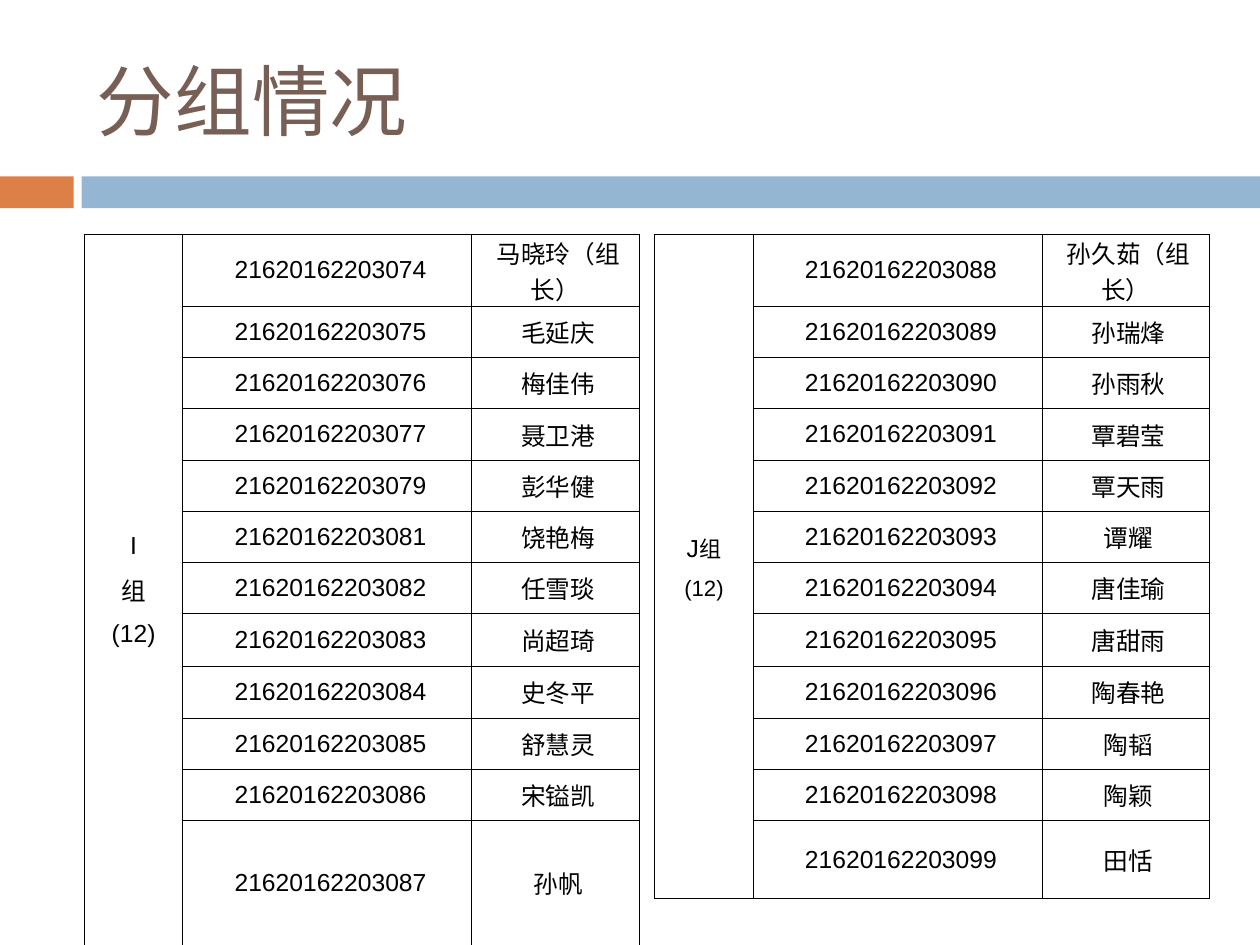
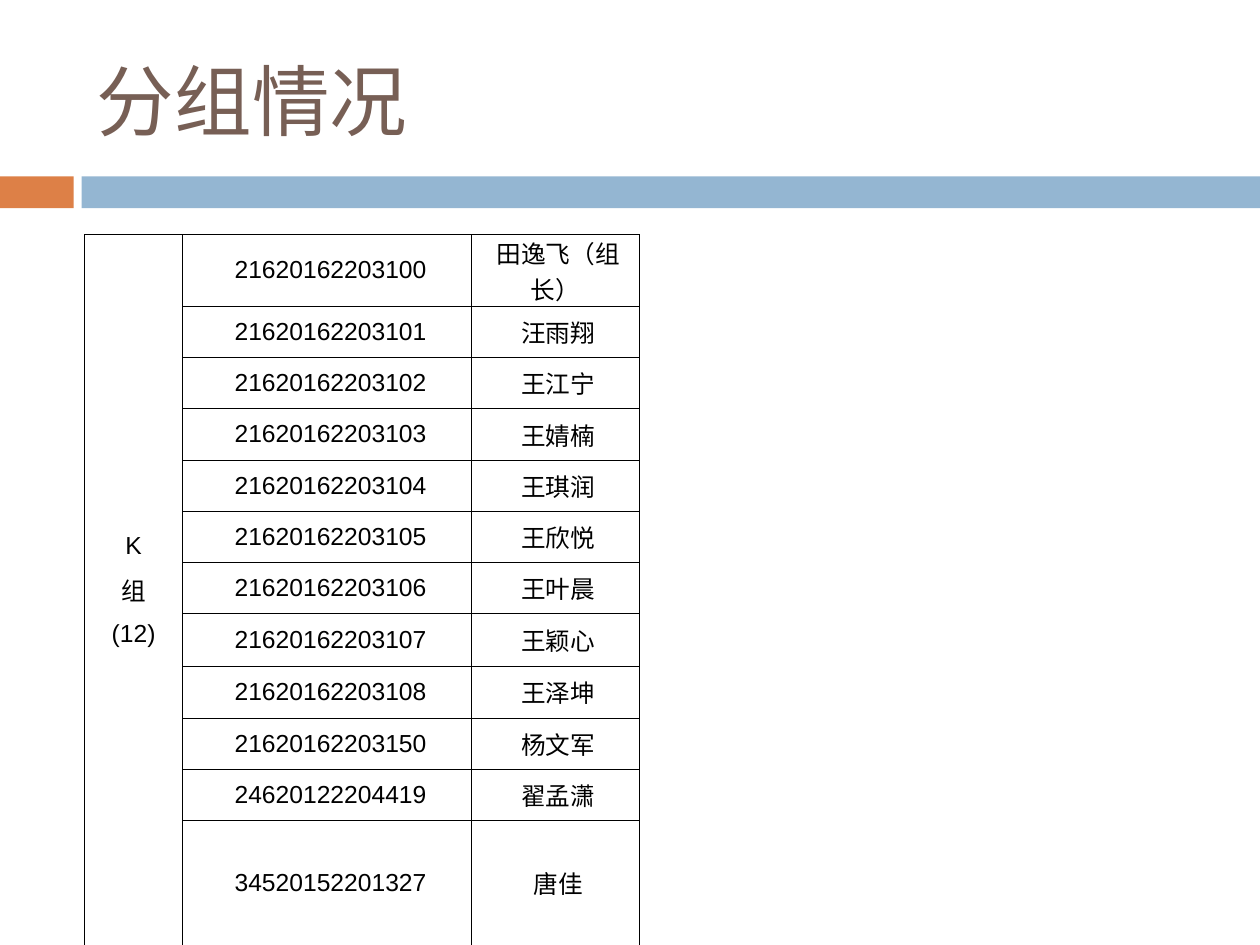
from lxml import etree
from pptx import Presentation
from pptx.dml.color import RGBColor
from pptx.enum import shapes, text
from pptx.oxml import ns
from pptx.util import Cm, Pt

ORANGE = RGBColor(0xDD, 0x80, 0x47)
BLUE = RGBColor(0x94, 0xB6, 0xD2)
BROWN = RGBColor(0x77, 0x5F, 0x55)
BLACK = RGBColor(0, 0, 0)
WHITE = RGBColor(0xFF, 0xFF, 0xFF)

SLIDE_WIDTH, SLIDE_HEIGHT = Cm(36.12), Cm(27.1)
MARGIN = Cm(2.42)
COLUMN_WIDTHS = [Cm(2.82), Cm(8.28), Cm(4.8)]
ROSTER_TOP = Cm(6.73)
ROSTER_STEP = sum(COLUMN_WIDTHS) + Cm(0.45)
ROW_HEIGHT, TALL_ROW_HEIGHT = Cm(1.47), Cm(1.5)
TALL_ROWS = (7, 8)

GROUP_I = [
    ("21620162203074", "马晓玲（组长）"),
    ("21620162203075", "毛延庆"),
    ("21620162203076", "梅佳伟"),
    ("21620162203077", "聂卫港"),
    ("21620162203079", "彭华健"),
    ("21620162203081", "饶艳梅"),
    ("21620162203082", "任雪琰"),
    ("21620162203083", "尚超琦"),
    ("21620162203084", "史冬平"),
    ("21620162203085", "舒慧灵"),
    ("21620162203086", "宋镒凯"),
    ("21620162203087", "孙帆"),
]
GROUP_J = [
    ("21620162203088", "孙久茹（组长）"),
    ("21620162203089", "孙瑞烽"),
    ("21620162203090", "孙雨秋"),
    ("21620162203091", "覃碧莹"),
    ("21620162203092", "覃天雨"),
    ("21620162203093", "谭耀"),
    ("21620162203094", "唐佳瑜"),
    ("21620162203095", "唐甜雨"),
    ("21620162203096", "陶春艳"),
    ("21620162203097", "陶韬"),
    ("21620162203098", "陶颖"),
    ("21620162203099", "田恬"),
]
GROUP_K = [
    ("21620162203100", "田逸飞（组长）"),
    ("21620162203101", "汪雨翔"),
    ("21620162203102", "王江宁"),
    ("21620162203103", "王婧楠"),
    ("21620162203104", "王琪润"),
    ("21620162203105", "王欣悦"),
    ("21620162203106", "王叶晨"),
    ("21620162203107", "王颖心"),
    ("21620162203108", "王泽坤"),
    ("21620162203150", "杨文军"),
    ("24620122204419", "翟孟潇"),
    ("34520152201327", "唐佳"),
]
LABEL_I = [[("I", 20)], [("组", 20)], [("(12)", 20)]]
LABEL_J = [[("J", 20), ("组", 18)], [("(12)", 18)]]
LABEL_K = [[("K", 20)], [("组", 20)], [("(12)", 20)]]


def write(paragraph, words, size=20, font="Arial", color=BLACK,
          align=text.PP_ALIGN.CENTER, before=0):
    paragraph.alignment = align
    paragraph.space_before = Pt(before)
    run = paragraph.add_run()
    run.text = words
    run.font.size = Pt(size)
    run.font.name = font
    run.font.color.rgb = color


class Deck:
    def __init__(self):
        self.presentation = Presentation()
        self.presentation.slide_width = SLIDE_WIDTH
        self.presentation.slide_height = SLIDE_HEIGHT
        self.slide = None

    def add_slide(self, heading):
        layout = self.presentation.slide_layouts.get_by_name("Title Only")
        self.slide = self.presentation.slides.add_slide(layout)
        self.band(0, Cm(2.11), ORANGE)
        self.band(Cm(2.34), SLIDE_WIDTH - Cm(2.34), BLUE)
        self.title(heading)

    def band(self, left, width, color):
        band = self.slide.shapes.add_shape(
            shapes.MSO_SHAPE.RECTANGLE, left, Cm(5.06), width, Cm(0.91))
        band.shadow.inherit = False
        band.fill.solid()
        band.fill.fore_color.rgb = color
        band.line.fill.background()

    def title(self, heading):
        title = self.slide.shapes.title
        title.left, title.top = MARGIN, Cm(0.91)
        title.width, title.height = Cm(32.2), Cm(3.91)
        frame = title.text_frame
        frame.auto_size = text.MSO_AUTO_SIZE.NONE
        frame.vertical_anchor = text.MSO_ANCHOR.MIDDLE
        frame.margin_left = frame.margin_right = Cm(0.36)
        frame.margin_top = frame.margin_bottom = Cm(0.18)
        write(frame.paragraphs[0], heading, size=63, font="Calibri",
              color=BROWN, align=text.PP_ALIGN.LEFT)

    def style_cell(self, cell):
        properties = cell._tc.get_or_add_tcPr()
        for side in ("a:lnL", "a:lnR", "a:lnT", "a:lnB"):
            border = etree.SubElement(properties, ns.qn(side), w=str(Pt(0.75)))
            paint = etree.SubElement(border, ns.qn("a:solidFill"))
            etree.SubElement(paint, ns.qn("a:srgbClr"), val=str(BLACK))
        cell.fill.solid()
        cell.fill.fore_color.rgb = WHITE
        cell.vertical_anchor = text.MSO_ANCHOR.MIDDLE

    def roster(self, position, label, members):
        roster = self.slide.shapes.add_table(
            len(members), len(COLUMN_WIDTHS), MARGIN + position * ROSTER_STEP,
            ROSTER_TOP, sum(COLUMN_WIDTHS), ROW_HEIGHT * len(members)).table
        roster.first_row = roster.horz_banding = False
        for column, width in zip(roster.columns, COLUMN_WIDTHS):
            column.width = width
        for index, row in enumerate(roster.rows):
            row.height = TALL_ROW_HEIGHT if index in TALL_ROWS else ROW_HEIGHT
        for cell in roster.iter_cells():
            self.style_cell(cell)
        for index, member in enumerate(members):
            for column, words in enumerate(member, start=1):
                cell = roster.cell(index, column)
                cell.margin_left = cell.margin_right = 0
                cell.margin_top = cell.margin_bottom = 0
                write(cell.text_frame.paragraphs[0], f" {words}")
        group = roster.cell(0, 0)
        group.merge(roster.cell(len(members) - 1, 0))
        frame = group.text_frame
        for index, line in enumerate(label):
            paragraph = frame.add_paragraph() if index else frame.paragraphs[0]
            for words, size in line:
                write(paragraph, words, size=size, before=10)


def main():
    deck = Deck()
    for rosters in ([(LABEL_I, GROUP_I), (LABEL_J, GROUP_J)],
                    [(LABEL_K, GROUP_K)]):
        deck.add_slide("分组情况")
        for position, (label, members) in enumerate(rosters):
            deck.roster(position, label, members)
    deck.presentation.save("out.pptx")


if __name__ == "__main__":
    main()
